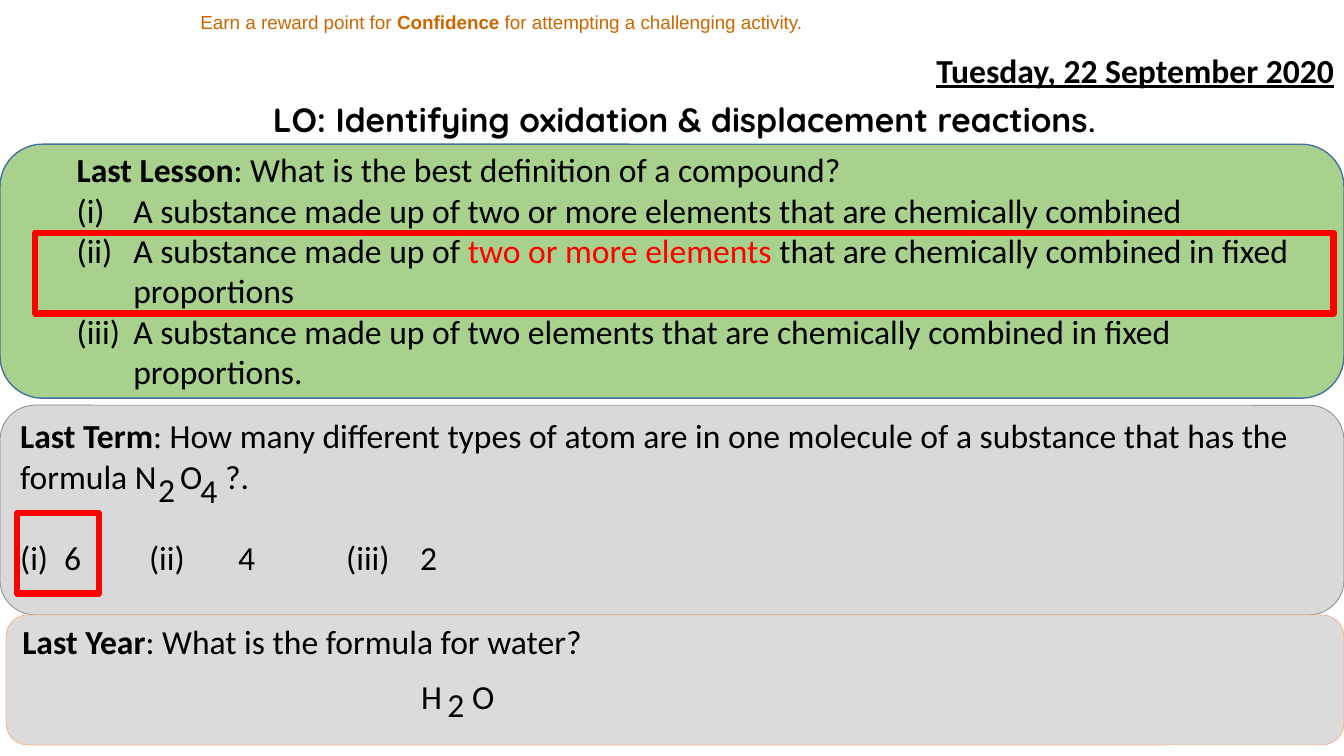
"""Build a science starter slide with three recall questions and their answers."""
from lxml.etree import SubElement
from pptx import Presentation
from pptx.dml.color import RGBColor
from pptx.enum.shapes import MSO_SHAPE
from pptx.enum.text import MSO_ANCHOR, MSO_AUTO_SIZE, PP_ALIGN
from pptx.oxml.ns import qn
from pptx.util import Pt

BLACK = RGBColor(0, 0, 0)
WHITE = RGBColor(255, 255, 255)
RED = RGBColor(255, 0, 0)
ORANGE = RGBColor(0xCC, 0x66, 0x00)
GREEN = RGBColor(0xA9, 0xD1, 0x8E)
BLUE = RGBColor(0x43, 0x73, 0x9E)
LIGHT_GREY = RGBColor(0xD9, 0xD9, 0xD9)
PALE_GREY = RGBColor(0xDB, 0xDB, 0xDB)
MID_GREY = RGBColor(0x80, 0x80, 0x80)
PEACH = RGBColor(0xF4, 0xB1, 0x83)

REWARD = [("Earn a reward point for ",), ("Confidence", True),
          (" for attempting a challenging activity.",)]
DATE = [("Tuesday, 22 September 2020", True)]
OBJECTIVE = [("LO: Identifying oxidation & displacement reactions", True), (".",)]
LESSON_QUESTION = [("Last Lesson", True), (": What is the best definition of a compound?",)]
LESSON_CHOICES = [
    [("A substance made up of two or more elements that are chemically combined",)],
    [("A substance made up of ",), ("two or more elements ", False, RED),
     ("that are chemically combined in fixed proportions",)],
    [("A substance made up of two elements that are chemically combined in fixed proportions.",)],
]
TERM_QUESTION = [("Last Term", True),
                 (": How many different types of atom are in one molecule of a substance "
                  "that has the formula N\tO\t?.",)]
TERM_CHOICES = [("(i)\t6\t(ii)\t4\t(iii)\t2",)]
YEAR_QUESTION = [("Last Year", True), (": What is the formula for water?",)]
YEAR_ANSWER = [("H\tO",)]

FORMULA_TABS = (114.3, 146.4)
CHOICE_TABS = (31.4, 92.1, 155.7, 232.9, 285.7)
WATER_TABS = (36.4,)
SUBSCRIPTS = [("2", 105.8, 331.2), ("4", 136.1, 331.9), ("2", 312.5, 485.3)]
ANSWER_MARKS = [(25.2, 166.3, 927.4, 57.6), (12.2, 366.5, 58.3, 57.6)]
LIST_INDENT = 40.5


def write(paragraph, runs, size=24, font="Calibri", color=BLACK, align=PP_ALIGN.LEFT):
    paragraph.alignment = align
    paragraph.line_spacing = 1.0
    paragraph.space_before = Pt(0)
    paragraph.font.size = Pt(size)
    paragraph.font.name = font
    paragraph.font.color.rgb = color
    for text, *style in runs:
        run = paragraph.add_run()
        run.text = text
        run.font.bold = bool(style and style[0])
        if len(style) > 1:
            run.font.color.rgb = style[1]
    return paragraph


def set_tabs(paragraph, stops):
    properties = paragraph._p.get_or_add_pPr()
    tabs = properties.makeelement(qn("a:tabLst"), {})
    for stop in stops:
        SubElement(tabs, qn("a:tab"), pos=str(int(Pt(stop))), algn="l")
    properties.find(qn("a:defRPr")).addprevious(tabs)


def set_list_level(paragraph, indent, bullet, **options):
    properties = paragraph._p.get_or_add_pPr()
    properties.set("marL", str(int(Pt(indent))))
    properties.set("indent", str(int(Pt(-indent))))
    marker = properties.makeelement(qn(bullet), options)
    properties.find(qn("a:defRPr")).addprevious(marker)


def place(shape, left, top, width, height):
    shape.left, shape.top, shape.width, shape.height = map(Pt, (left, top, width, height))


def add_panel(shapes, preset, box, fill=None, line=None, weight=0.5):
    panel = shapes.add_shape(preset, *map(Pt, box))
    panel.shadow.inherit = False
    if fill is None:
        panel.fill.background()
    else:
        panel.fill.solid()
        panel.fill.fore_color.rgb = fill
    if line is None:
        panel.line.fill.background()
    else:
        panel.line.color.rgb = line
        panel.line.width = Pt(weight)
    panel.text_frame.vertical_anchor = MSO_ANCHOR.TOP
    return panel


def add_label(shapes, runs, *box):
    label = shapes.add_textbox(*map(Pt, box)).text_frame
    label.word_wrap = True
    return write(label.paragraphs[0], runs)


def main():
    deck = Presentation()
    deck.slide_width, deck.slide_height = Pt(960), Pt(540)
    slide = deck.slides.add_slide(deck.slide_layouts[1])
    shapes = slide.shapes
    objective, lesson = slide.placeholders

    place(objective, 24, 70.3, 930, 30)
    heading = objective.text_frame
    heading.auto_size = MSO_AUTO_SIZE.NONE
    heading.vertical_anchor = MSO_ANCHOR.TOP
    heading.margin_top = heading.margin_bottom = 0
    write(heading.paragraphs[0], OBJECTIVE, font="Quicksand", align=PP_ALIGN.CENTER)
    heading.paragraphs[0].runs[-1].font.name = "Calibri"

    date = add_label(shapes, DATE, 560, 32.1, 400, 36)
    date.alignment = PP_ALIGN.RIGHT
    date.font.underline = True

    term = add_panel(shapes, MSO_SHAPE.ROUNDED_RECTANGLE, (0, 289.4, 960, 149.8),
                     LIGHT_GREY, MID_GREY).text_frame
    term.margin_top = 0
    set_tabs(write(term.paragraphs[0], TERM_QUESTION), FORMULA_TABS)
    choices = write(term.add_paragraph(), TERM_CHOICES)
    choices.space_before = Pt(29)
    set_tabs(choices, CHOICE_TABS)

    year = add_panel(shapes, MSO_SHAPE.ROUNDED_RECTANGLE, (4.3, 439.2, 955.7, 92.9),
                     PALE_GREY, PEACH).text_frame
    year.margin_top = 0
    write(year.paragraphs[0], YEAR_QUESTION)

    reward = add_panel(shapes, MSO_SHAPE.RECTANGLE, (136.1, 4.3, 533.5, 23.8), WHITE)
    write(reward.text_frame.paragraphs[0], REWARD, 13.5, "Arial", ORANGE)

    lesson_panel = add_panel(shapes, MSO_SHAPE.ROUNDED_RECTANGLE, (0, 103, 960, 181.4),
                             GREEN, BLUE, 1)
    lesson_panel._element.addnext(lesson._element)
    place(lesson, 47.5, 103, 902.9, 181.4)
    definitions = lesson.text_frame
    definitions.auto_size = MSO_AUTO_SIZE.NONE
    question = write(definitions.paragraphs[0], LESSON_QUESTION)
    set_list_level(question, 0, "a:buNone")
    for choice in LESSON_CHOICES:
        definition = write(definitions.add_paragraph(), choice)
        set_list_level(definition, LIST_INDENT, "a:buAutoNum", type="romanLcParenBoth")

    for mark in ANSWER_MARKS:
        add_panel(shapes, MSO_SHAPE.RECTANGLE, mark, line=RED, weight=4.5)
    set_tabs(add_label(shapes, YEAR_ANSWER, 293.8, 479.5, 79.2, 36), WATER_TABS)
    for digit, left, top in SUBSCRIPTS:
        add_label(shapes, [(digit,)], left, top, 30.2, 36)

    deck.save("out.pptx")


if __name__ == "__main__":
    main()
